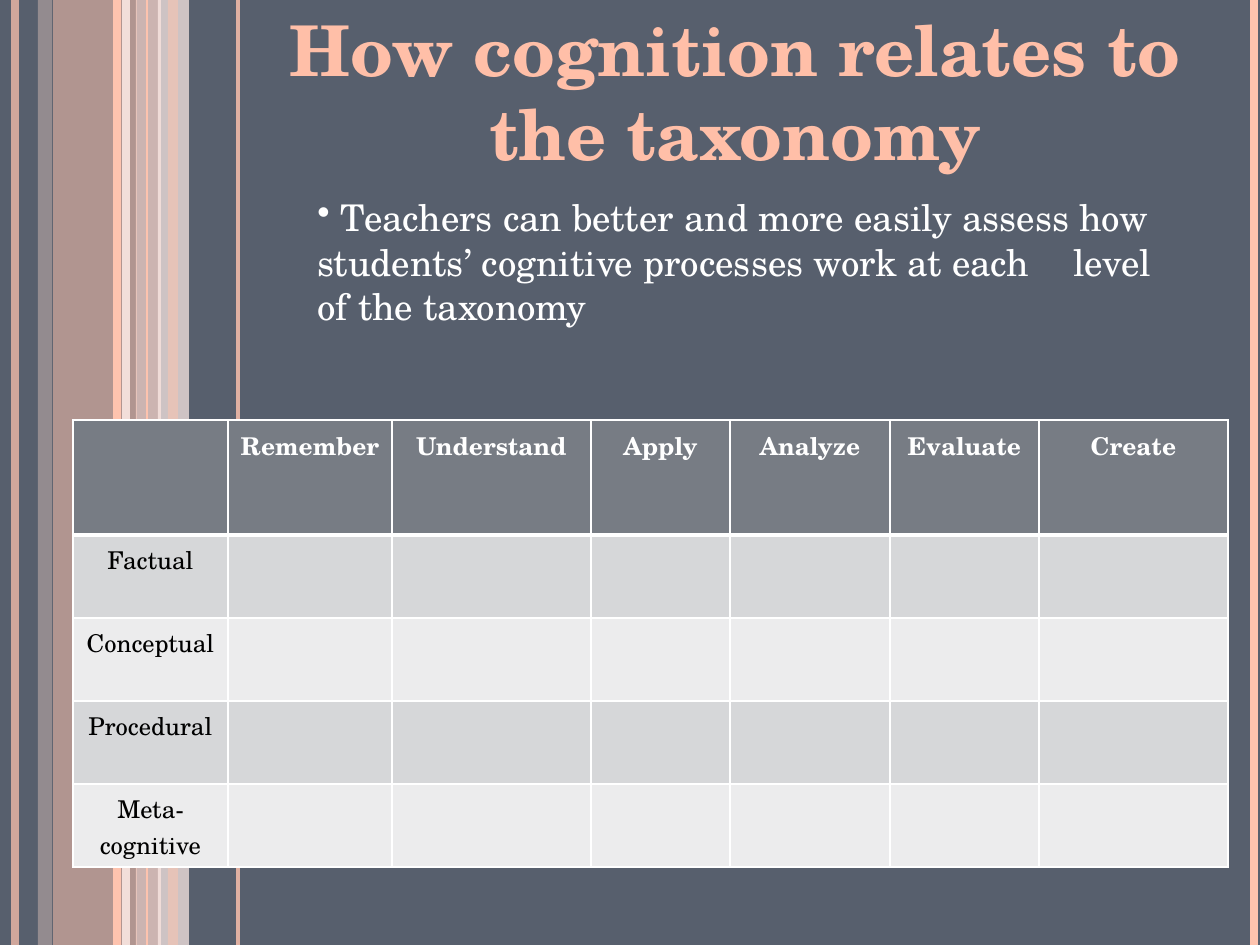
from lxml import etree
from pptx import Presentation
from pptx.dml.color import RGBColor
from pptx.enum.shapes import MSO_CONNECTOR, MSO_SHAPE
from pptx.enum.text import PP_ALIGN
from pptx.oxml.ns import qn
from pptx.util import Pt

RECTANGLE = MSO_SHAPE.RECTANGLE
STRAIGHT = MSO_CONNECTOR.STRAIGHT
CENTER, LEFT = PP_ALIGN.CENTER, PP_ALIGN.LEFT

FONT = "TeX Gyre Schola"
WIDTH, HEIGHT = 1260, 945
BACKGROUND, WHITE, BLACK = "575F6D", "FFFFFF", "000000"
PEACH, PALE, PALEST = "FEC3AE", "FFD9CE", "FFEDE8"
TITLE_COLOR, HEADER_FILL = "FFBFA8", "777C84"
ROW_FILLS = ["D6D7D9", "ECECED"]

# Back to front: (kind, x, width, colour, opacity %); bars in px, lines in points
STRIPES = [
    ("bar", 53, 84, PEACH, 54),
    ("bar", 38, 14, PALE, 36),
    ("bar", 136, 25, PALE, 70),
    ("bar", 158, 31, PALEST, 71),
    ("line", 15, 4.5, PEACH, 73),
    ("line", 126, 4.5, PALEST, 83),
    ("line", 117, 4.5, PEACH, 100),
    ("line", 238, 2.25, PEACH, 82),
    ("line", 147, 0.75, PEACH, 100),
    ("bar", 168, 10, PEACH, 51),
    ("line", 1254, 4.5, PEACH, 100),
]

TITLE = "How cognition relates to the taxonomy"
BODY = (" Teachers can better and more easily assess how \tstudents’ cognitive "
        "processes work at each \tlevel of the taxonomy")

HEADERS = ["", "Remember", "Understand", "Apply", "Analyze", "Evaluate", "Create"]
KNOWLEDGE = ["Factual", "Conceptual", "Procedural", "Meta-cognitive"]
COLUMN_WIDTHS = [155, 164, 199, 139, 160, 149, 189]
ROW_HEIGHTS = [115] + [83] * len(KNOWLEDGE)
TABLE_LEFT, TABLE_TOP = 73, 420


def px(value):
    return round(value * 914400 / 126)


def rgb(color):
    return RGBColor.from_string(color)


def paint(fill, color):
    fill.solid()
    fill.fore_color.rgb = rgb(color)


def set_opacity(shape, percent):
    if percent < 100:
        for node in shape._element.iter(qn("a:srgbClr")):
            etree.SubElement(node, qn("a:alpha"), val=str(percent * 1000))


def add_stripe(page, kind, x, width, color, opacity):
    if kind == "bar":
        stripe = page.shapes.add_shape(RECTANGLE, px(x), 0, px(width), px(HEIGHT))
        stripe.shadow.inherit = False
        stripe.line.fill.background()
        paint(stripe.fill, color)
    else:
        stripe = page.shapes.add_connector(STRAIGHT, px(x), 0, px(x), px(HEIGHT))
        stripe.line.width = Pt(width)
        paint(stripe.line.fill, color)
        etree.SubElement(stripe._element.spPr, qn("a:effectLst"))
    set_opacity(stripe, opacity)


def write(frame, text, size, color, bold=False, align=CENTER):
    frame.word_wrap = True
    frame.text = text
    para = frame.paragraphs[0]
    para.alignment = align
    for span in para.runs:
        span.font.name = FONT
        span.font.size = Pt(size)
        span.font.bold = bold
        span.font.color.rgb = rgb(color)
    return para


def add_text(page, x, y, width, height, *style):
    box = page.shapes.add_textbox(px(x), px(y), px(width), px(height))
    return write(box.text_frame, *style)


def add_bullet(para):
    properties = para._p.get_or_add_pPr()
    properties.set("marL", "0")
    properties.set("indent", "0")
    etree.SubElement(properties, qn("a:buChar"), char="•")


def set_borders(cell, top, bottom):
    """Draw white cell borders; top and bottom are widths in points."""
    properties = cell._tc.get_or_add_tcPr()
    for side, width in (("L", 1), ("R", 1), ("T", top), ("B", bottom)):
        border = etree.SubElement(properties, qn(f"a:ln{side}"), w=str(Pt(width)))
        fill = etree.SubElement(border, qn("a:solidFill"))
        etree.SubElement(fill, qn("a:srgbClr"), val=WHITE)


def add_taxonomy_table(page):
    rows = [HEADERS] + [[name] + [""] * (len(HEADERS) - 1) for name in KNOWLEDGE]
    table = page.shapes.add_table(
        len(rows), len(HEADERS), px(TABLE_LEFT), px(TABLE_TOP),
        px(sum(COLUMN_WIDTHS)), px(sum(ROW_HEIGHTS))).table
    for column, width in zip(table.columns, COLUMN_WIDTHS):
        column.width = px(width)
    for r, (labels, height) in enumerate(zip(rows, ROW_HEIGHTS)):
        table.rows[r].height = px(height)
        header = r == 0
        for c, label in enumerate(labels):
            cell = table.cell(r, c)
            set_borders(cell, 3 if r == 1 else 1, 3 if header else 1)
            paint(cell.fill, HEADER_FILL if header else ROW_FILLS[(r - 1) % 2])
            cell.margin_left = cell.margin_right = px(8)
            if label:
                write(cell.text_frame, label, 14, WHITE if header else BLACK, header)


def main():
    deck = Presentation()
    deck.slide_width, deck.slide_height = px(WIDTH), px(HEIGHT)
    page = deck.slides.add_slide(deck.slide_layouts[6])
    paint(page.background.fill, BACKGROUND)
    for stripe in STRIPES:
        add_stripe(page, *stripe)
    add_text(page, 220, 0, 1030, 183, TITLE, 40, TITLE_COLOR, True)
    add_bullet(add_text(page, 305, 189, 892, 146, BODY, 21, WHITE, False, LEFT))
    add_taxonomy_table(page)
    deck.save("out.pptx")


if __name__ == "__main__":
    main()
